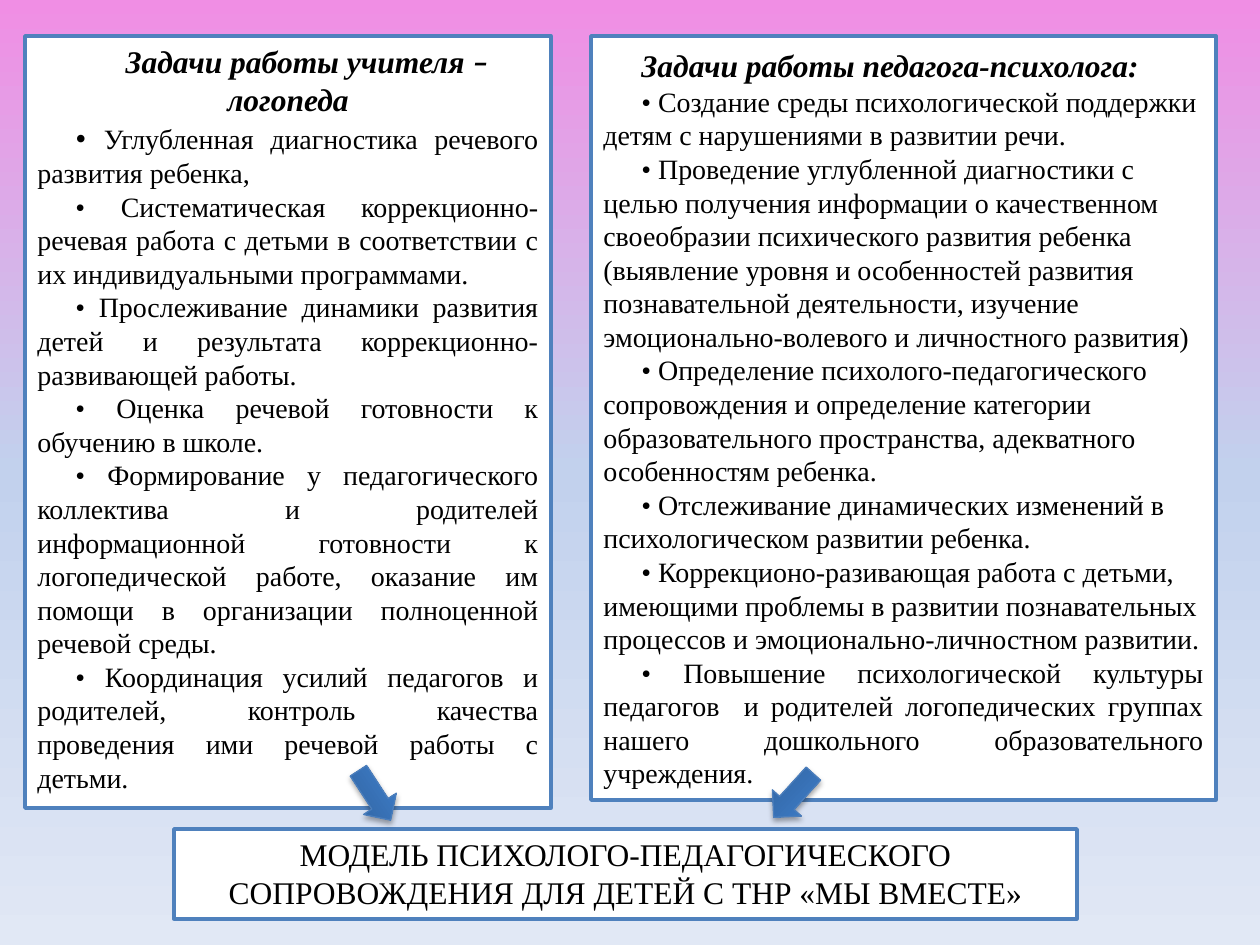
from dataclasses import dataclass
from lxml.etree import SubElement
from pptx import Presentation
from pptx.dml.color import RGBColor
from pptx.enum.shapes import MSO_SHAPE as Shape
from pptx.enum.text import MSO_ANCHOR as Anchor, MSO_AUTO_SIZE as AutoSize, PP_ALIGN as Align
from pptx.oxml.ns import qn
from pptx.util import Pt

PX = 914400 / 126  # EMU per px


@dataclass(frozen=True)
class Theme:
    font: str = "Times New Roman"
    dash_font: str = "Calibri"
    text: str = "000000"
    panel: str = "FFFFFF"
    border: str = "4F81BD"
    arrow_border: str = "4B7EBC"
    arrow: tuple = ((0, "2F5F99"), (80, "3D7CC7"), (100, "3A7CCB"))
    background: tuple = ((0, "F08EE4"), (50, "C2D1ED"), (100, "E1E8F5"))
    heading: int = 18
    body: int = 16


THEME = Theme()
INDENT = 38

THERAPIST_HEADING = "Задачи работы учителя ", "–", " логопеда"
THERAPIST_TASKS = [
    "Углубленная диагностика речевого развития ребенка,",
    "Систематическая коррекционно-речевая работа с детьми в соответствии с\n"
    "их индивидуальными программами.",
    "Прослеживание динамики развития детей и результата коррекционно-\n"
    "развивающей работы.",
    "Оценка речевой готовности к обучению в школе.",
    "Формирование у педагогического коллектива и родителей\n"
    "информационной готовности к логопедической работе, оказание им\n"
    "помощи в организации полноценной речевой среды.",
    "Координация усилий педагогов и родителей, контроль качества\n"
    "проведения ими речевой работы с детьми.",
]
PSYCHOLOGIST_HEADING = ("Задачи работы педагога-психолога:",)
PSYCHOLOGIST_TASKS = [
    "Создание среды психологической поддержки детям с нарушениями в развитии речи.",
    "Проведение углубленной диагностики с целью получения информации о качественном "
    "своеобразии психического развития ребенка (выявление уровня и особенностей развития "
    "познавательной деятельности, изучение эмоционально-волевого и личностного развития)",
    "Определение психолого-педагогического сопровождения и определение категории "
    "образовательного пространства, адекватного особенностям ребенка.",
    "Отслеживание динамических изменений в психологическом развитии ребенка.",
    "Коррекционо-разивающая работа с детьми, имеющими проблемы в развитии познавательных "
    "процессов и эмоционально-личностном развитии.",
    "Повышение психологической культуры педагогов  и родителей логопедических группах "
    "нашего дошкольного образовательного учреждения.",
]
MODEL = "МОДЕЛЬ ПСИХОЛОГО-ПЕДАГОГИЧЕСКОГО СОПРОВОЖДЕНИЯ ДЛЯ ДЕТЕЙ С ТНР «МЫ ВМЕСТЕ»"

# (left, top, width, height), anchor, heading, heading alignment, tasks, task alignments
PANELS = [
    ((25, 36, 526, 772), Anchor.TOP, THERAPIST_HEADING, Align.CENTER,
     THERAPIST_TASKS, [Align.JUSTIFY] * 6),
    ((591, 36, 625, 764), Anchor.MIDDLE, PSYCHOLOGIST_HEADING, Align.JUSTIFY,
     PSYCHOLOGIST_TASKS, [Align.LEFT] * 5 + [Align.JUSTIFY]),
]
MODEL_BOX = (174, 829, 903, 90)
ARROWS = [((345, 776, 59, 39), 56.9), ((764, 776, 59, 39), 132.2)]


def emu(px):
    return round(px * PX)


def set_gradient(fill, element, stops, angle):
    """Fill with any number of (percent, colour) stops; angle runs counter-clockwise."""
    fill.gradient()
    fill.gradient_angle = angle
    stop_list = next(element.iter(qn("a:gsLst")))
    for stop in list(stop_list):
        stop_list.remove(stop)
    for percent, colour in stops:
        stop = SubElement(stop_list, qn("a:gs"), pos=str(percent * 1000))
        SubElement(stop, qn("a:srgbClr"), val=colour)


def add_preset(slide, preset, box, border, border_width):
    shape = slide.shapes.add_shape(preset, *map(emu, box))
    shape.shadow.inherit = False
    shape.line.color.rgb = RGBColor.from_string(border)
    shape.line.width = Pt(border_width)
    return shape


def add_box(slide, box, anchor):
    shape = add_preset(slide, Shape.RECTANGLE, box, THEME.border, 2)
    shape.fill.solid()
    shape.fill.fore_color.rgb = RGBColor.from_string(THEME.panel)
    frame = shape.text_frame
    frame.word_wrap = True
    frame.auto_size = AutoSize.SHAPE_TO_FIT_TEXT
    frame.vertical_anchor = anchor
    return frame


def write(paragraph, pieces, alignment, size, emphasis=False, indent=0):
    paragraph.text = pieces[0]
    for piece in pieces[1:]:
        paragraph.add_run().text = piece
    paragraph.alignment = alignment
    properties = paragraph._p.get_or_add_pPr()
    properties.set("marL", "0")
    properties.set("indent", str(emu(indent)))
    for run in paragraph.runs:
        font = run.font
        font.name = THEME.dash_font if run.text == "–" else THEME.font
        font.size = Pt(size)
        font.bold = font.italic = emphasis
        font.color.rgb = RGBColor.from_string(THEME.text)
    for line_break in paragraph._p.findall(qn("a:br")):
        SubElement(line_break, qn("a:rPr"), sz=str(size * 100))


def add_panel(slide, box, anchor, heading, heading_alignment, tasks, alignments):
    frame = add_box(slide, box, anchor)
    write(frame.paragraphs[0], heading, heading_alignment, THEME.heading, True, INDENT)
    for task, alignment in zip(tasks, alignments):
        write(frame.add_paragraph(), ["• ", task] if task == THERAPIST_TASKS[0] else ["• " + task],
              alignment, THEME.body, indent=INDENT)
    if tasks is THERAPIST_TASKS:  # the first bullet keeps the heading size
        frame.paragraphs[1].runs[0].font.size = Pt(THEME.heading)


def add_arrow(slide, box, rotation):
    arrow = add_preset(slide, Shape.RIGHT_ARROW, box, THEME.arrow_border, 0.75)
    arrow.rotation = rotation
    set_gradient(arrow.fill, arrow._element, THEME.arrow, 90)
    effects = arrow._element.spPr.find(qn("a:effectLst"))
    shadow = SubElement(effects, qn("a:outerShdw"), blurRad=str(Pt(3.1)), dist=str(Pt(1.8)),
                        dir="5400000", rotWithShape="0")
    colour = SubElement(shadow, qn("a:srgbClr"), val="000000")
    SubElement(colour, qn("a:alpha"), val="35000")


def main():
    deck = Presentation()
    deck.slide_width, deck.slide_height = emu(1260), emu(945)
    slide = deck.slides.add_slide(deck.slide_layouts[6])
    set_gradient(slide.background.fill, slide._element, THEME.background, 270)
    for panel in PANELS:
        add_panel(slide, *panel)
    model = add_box(slide, MODEL_BOX, Anchor.TOP)
    write(model.paragraphs[0], [MODEL], Align.CENTER, THEME.heading)
    for box, rotation in ARROWS:
        add_arrow(slide, box, rotation)
    deck.save("out.pptx")


if __name__ == "__main__":
    main()
